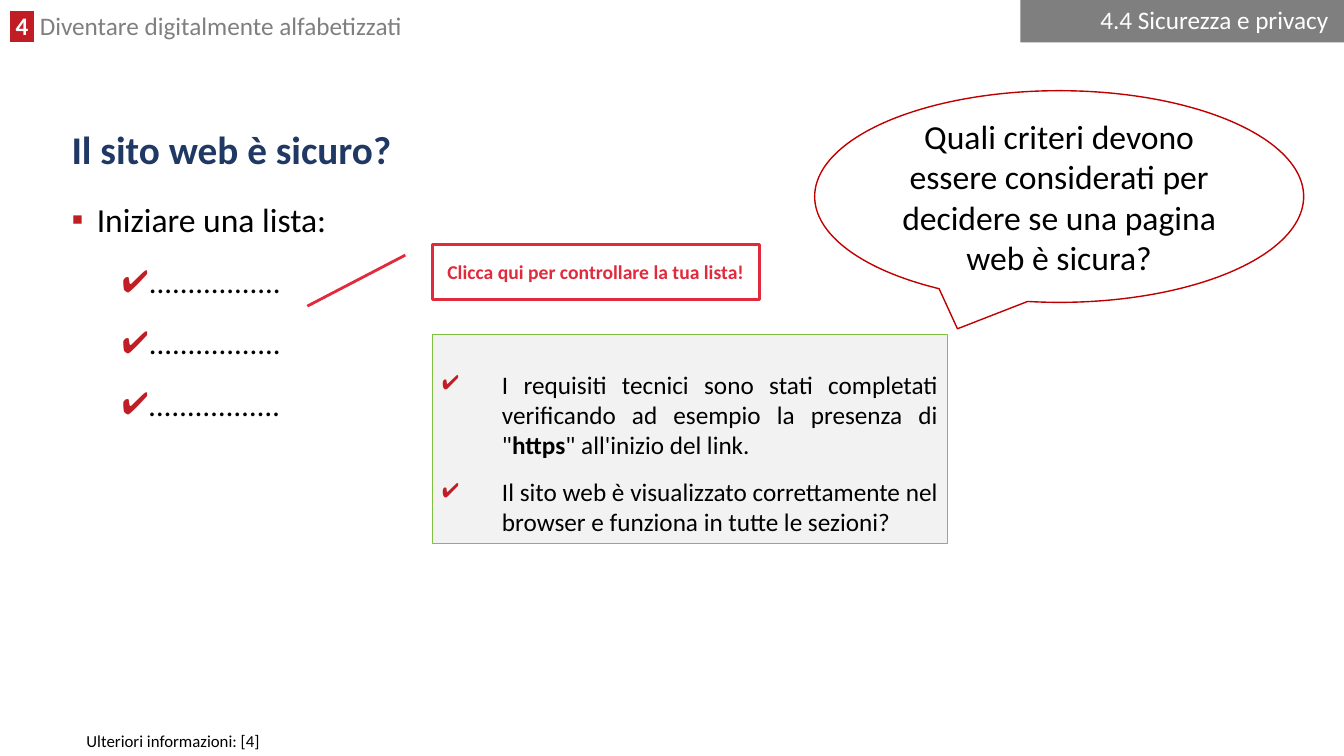
from lxml.etree import SubElement
from pptx import Presentation
from pptx.dml.color import RGBColor
from pptx.enum.shapes import MSO_SHAPE
from pptx.enum.text import MSO_ANCHOR, MSO_AUTO_SIZE, PP_ALIGN
from pptx.oxml import parse_xml
from pptx.oxml.ns import nsdecls, qn
from pptx.util import Pt

PX = 9144
RED = "C01E24"
CALLOUT_RED = "E12A3C"
GREY = "7F7F7F"
WHITE = "FFFFFF"
BLACK = "000000"


def emu(*lengths):
    return [length * PX for length in lengths]


def color(hex_code):
    return RGBColor.from_string(hex_code)


def place(part, box):
    part.left, part.top, part.width, part.height = emu(*box)


def prepare(part, anchor=MSO_ANCHOR.TOP, top_inset=5):
    frame = part.text_frame
    frame.word_wrap = True
    frame.auto_size = MSO_AUTO_SIZE.NONE
    frame.vertical_anchor = anchor
    frame.margin_left, frame.margin_top, frame.margin_right, frame.margin_bottom = emu(
        10, top_inset, 10, 5)
    return frame


def add_bullet(paragraph, mark, margin, hanging):
    properties = paragraph._p.get_or_add_pPr()
    properties.set("marL", str(margin * PX))
    properties.set("indent", str(-hanging * PX))
    tint = SubElement(properties, qn("a:buClr"))
    SubElement(tint, qn("a:srgbClr"), val=RED)
    SubElement(properties, qn("a:buChar"), char=mark)


def write(paragraph, text, size=18, ink=BLACK, bold=False, italic=False, highlight=None):
    run = paragraph.add_run()
    run.text = text
    font = run.font
    font.size = Pt(size)
    font.bold = bold
    font.italic = italic
    font.color.rgb = color(ink)
    if highlight:
        run._r.rPr.find(qn("a:solidFill")).addnext(parse_xml(
            f'<a:highlight {nsdecls("a")}><a:srgbClr val="{highlight}"/></a:highlight>'))
    font.name = "Calibri"


def format_paragraph(paragraph, align=PP_ALIGN.LEFT, spacing=1.0, before=0, after=0, level=0):
    paragraph.alignment = align
    paragraph.line_spacing = spacing
    paragraph.space_before = Pt(before)
    paragraph.space_after = Pt(after)
    paragraph.level = level
    return paragraph


def add_panel(slide, kind, box, fill, line=None, weight=1):
    panel = slide.shapes.add_shape(kind, *emu(*box))
    panel.shadow.inherit = False
    panel.fill.solid()
    panel.fill.fore_color.rgb = color(fill)
    if line:
        panel.line.color.rgb = color(line)
        panel.line.width = Pt(weight)
    else:
        panel.line.fill.background()
    return panel


def draw_chapter(slide, box):
    frame = prepare(slide.shapes.add_textbox(*emu(*box)))
    chapter = format_paragraph(frame.paragraphs[0], spacing=0.8)
    write(chapter, " 4 ", ink=WHITE, bold=True, highlight=RED)
    write(chapter, " Diventare digitalmente alfabetizzati", ink=GREY)


def draw_section(slide, box):
    tab = add_panel(slide, MSO_SHAPE.RECTANGLE, box, GREY)
    frame = prepare(tab, MSO_ANCHOR.MIDDLE)
    section = format_paragraph(frame.paragraphs[0], PP_ALIGN.RIGHT, 0.9)
    write(section, "4.4 Sicurezza e privacy ", ink=WHITE)


def draw_title(slide, box):
    title = slide.shapes.title
    place(title, box)
    heading = format_paragraph(prepare(title, MSO_ANCHOR.MIDDLE).paragraphs[0], spacing=0.9)
    write(heading, "Il sito web è sicuro?", 28, "203864", bold=True)


def draw_list(slide, box):
    body = slide.placeholders[1]
    place(body, box)
    frame = prepare(body)
    intro = format_paragraph(frame.paragraphs[0], spacing=1.2)
    add_bullet(intro, "▪", 25, 25)
    write(intro, "Iniziare una lista:", 24)
    for italic in (False, False, True):
        entry = format_paragraph(frame.add_paragraph(), spacing=1.2, before=12, level=1)
        add_bullet(entry, "✔", 75, 25)
        write(entry, ".................", 22, italic=italic)


def draw_source_note(slide, box):
    frame = prepare(slide.shapes.add_textbox(*emu(*box)))
    write(format_paragraph(frame.paragraphs[0]), "Ulteriori informazioni: [4]", 12)


def draw_question(slide, box):
    bubble = add_panel(slide, MSO_SHAPE.OVAL_CALLOUT, box, WHITE, "C00000")
    bubble.adjustments[0] = -0.208
    bubble.adjustments[1] = 0.625
    frame = prepare(bubble, MSO_ANCHOR.MIDDLE)
    question = format_paragraph(frame.paragraphs[0], PP_ALIGN.CENTER)
    write(question, "Quali criteri devono essere considerati per decidere "
                    "se una pagina web è sicura?", 24)


def draw_criteria(slide, box):
    card = add_panel(slide, MSO_SHAPE.RECTANGLE, box, "F2F2F2", "80C141", 0.75)
    frame = prepare(card, top_inset=34)
    technical = frame.paragraphs[0]
    display = frame.add_paragraph()
    for criterion, before in ((technical, 0), (display, 6)):
        format_paragraph(criterion, PP_ALIGN.JUSTIFY, before=before, after=6, level=1)
        add_bullet(criterion, "✔", 59, 59)
    write(technical, "I requisiti tecnici sono stati completati verificando "
                     "ad esempio la presenza di \"")
    write(technical, "https", bold=True)
    write(technical, "\" all'inizio del link. ")
    write(display, "Il sito web è visualizzato correttamente nel browser "
                   "e funziona in tutte le sezioni? ")


def draw_check_prompt(slide, box):
    prompt_box = add_panel(slide, MSO_SHAPE.LINE_CALLOUT_1, box, WHITE, CALLOUT_RED, 2)
    frame = prepare(prompt_box, MSO_ANCHOR.MIDDLE)
    prompt = format_paragraph(frame.paragraphs[0], PP_ALIGN.CENTER)
    write(prompt, "Clicca qui per controllare la tua lista!", 14, CALLOUT_RED, bold=True)


def main():
    deck = Presentation()
    deck.slide_width, deck.slide_height = emu(1333, 750)
    slide = deck.slides.add_slide(deck.slide_layouts[1])
    draw_chapter(slide, (0, 11, 952, 34))
    draw_title(slide, (61, 118, 1210, 66))
    draw_section(slide, (1012, 0, 321, 42))
    draw_list(slide, (61, 184, 774, 551))
    draw_source_note(slide, (76, 720, 1290, 30))
    draw_question(slide, (808, 90, 485, 210))
    draw_criteria(slide, (429, 332, 511, 207))
    draw_check_prompt(slide, (429, 243, 324, 54))
    deck.save("out.pptx")


if __name__ == "__main__":
    main()
